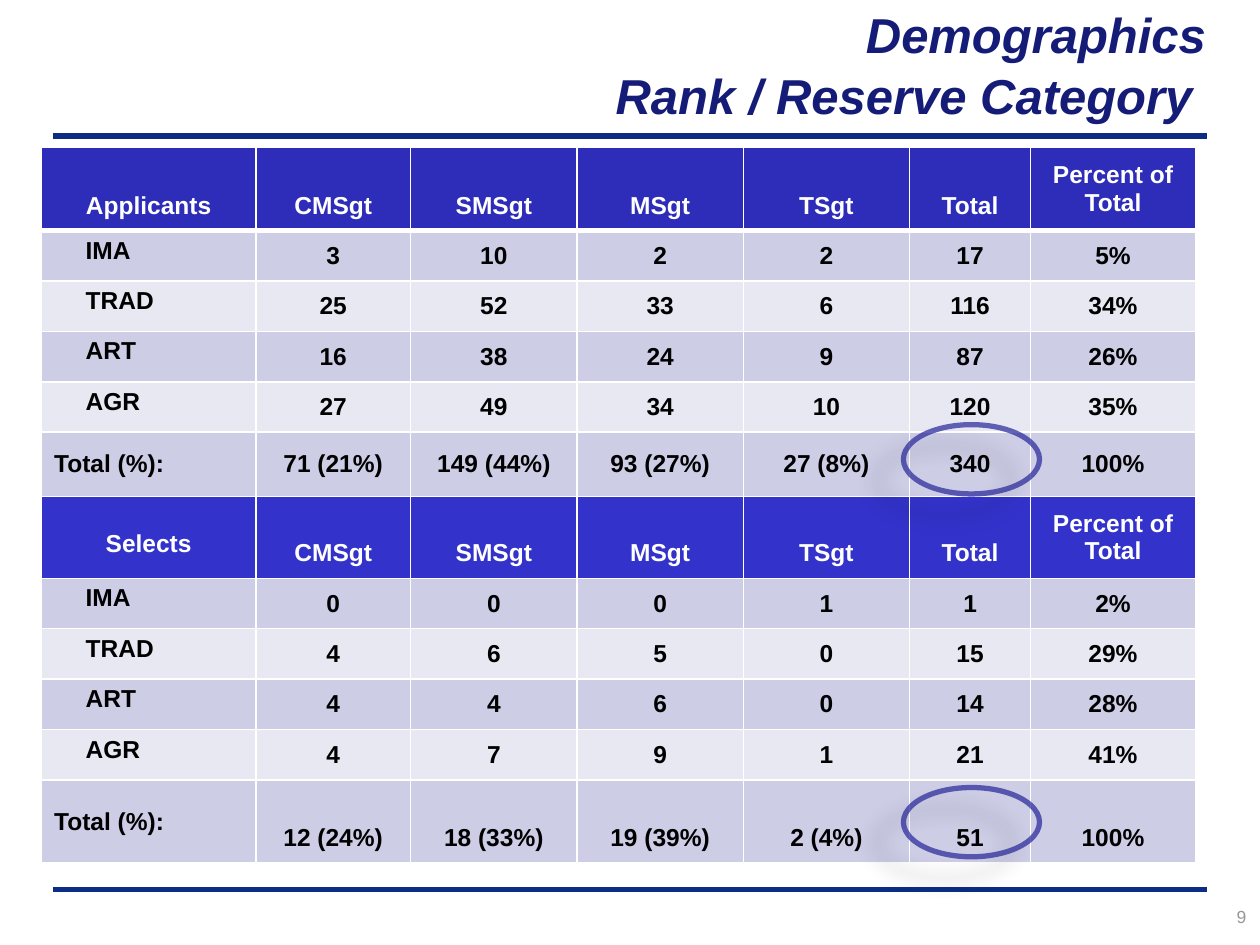
from lxml import etree
from pptx import Presentation
from pptx.dml.color import RGBColor
from pptx.enum.shapes import MSO_CONNECTOR as Connector, MSO_SHAPE as Shape
from pptx.enum.text import MSO_ANCHOR as Anchor, PP_ALIGN as Align
from pptx.oxml.ns import qn
from pptx.util import Inches, Pt

NAVY = RGBColor(0x15, 0x1C, 0x77)
RULE_BLUE = RGBColor(0x0C, 0x2D, 0x83)
APPLICANT_BLUE = RGBColor(0x2D, 0x2D, 0xB9)
SELECT_BLUE = RGBColor(0x33, 0x33, 0xCC)
DARK_BAND = RGBColor(0xCD, 0xCD, 0xE6)
LIGHT_BAND = RGBColor(0xE8, 0xE8, 0xF3)
RING_BLUE = RGBColor(0x26, 0x26, 0x99)
GRAY = RGBColor(0x96, 0x96, 0x96)
WHITE = RGBColor(0xFF, 0xFF, 0xFF)
BLACK = RGBColor(0, 0, 0)

RANKS = ["CMSgt", "SMSgt", "MSgt", "TSgt", "Total", "Percent of Total"]
ROWS = [
    ["Applicants", *RANKS],
    ["IMA", "3", "10", "2", "2", "17", "5%"],
    ["TRAD", "25", "52", "33", "6", "116", "34%"],
    ["ART", "16", "38", "24", "9", "87", "26%"],
    ["AGR", "27", "49", "34", "10", "120", "35%"],
    ["Total (%):", "71 (21%)", "149 (44%)", "93 (27%)", "27 (8%)", "340", "100%"],
    ["Selects", *RANKS],
    ["IMA", "0", "0", "0", "1", "1", "2%"],
    ["TRAD", "4", "6", "5", "0", "15", "29%"],
    ["ART", "4", "4", "6", "0", "14", "28%"],
    ["AGR", "4", "7", "9", "1", "21", "41%"],
    ["Total (%):", "12 (24%)", "18 (33%)", "19 (39%)", "2 (4%)", "51", "100%"],
]
COLUMN_WIDTHS = [1.7, 1.23, 1.32, 1.32, 1.32, 0.96, 1.31]
ROW_HEIGHTS = [0.66, 0.4, 0.4, 0.4, 0.4, 0.51, 0.65, 0.4, 0.4, 0.4, 0.4, 0.66]
SECTION_SIZE = 6
HEADER_FILLS = [APPLICANT_BLUE, SELECT_BLUE]


def write_text(frame, text, *, size=14, color=BLACK, bold=False, italic=False,
               align=Align.CENTER, indent=0, spacing=None):
    frame.word_wrap = True
    frame.text = text
    para = frame.paragraphs[0]
    para.alignment = align
    if indent:
        properties = para._p.get_or_add_pPr()
        properties.set("marL", "0")
        properties.set("indent", str(Inches(indent)))
    if spacing:
        para.line_spacing = spacing
    for span in para.runs:
        span.font.name = "Arial"
        span.font.size = Pt(size)
        span.font.bold = bold
        span.font.italic = italic
        span.font.color.rgb = color


def add_title(page):
    title = page.shapes.title
    title.left, title.top = Inches(1.67), Inches(0)
    title.width, title.height = Inches(8), Inches(1)
    write_text(title.text_frame, "Demographics\v Rank / Reserve Category ", size=28,
               color=NAVY, bold=True, italic=True, align=Align.RIGHT, spacing=1.05)
    title.text_frame.vertical_anchor = Anchor.MIDDLE


def add_rule(page, top):
    rule = page.shapes.add_connector(Connector.STRAIGHT, Inches(0.42), Inches(top),
                                     Inches(9.58), Inches(top))
    rule.line.color.rgb = RULE_BLUE
    rule.line.width = Pt(3)
    etree.SubElement(rule._element.spPr, qn("a:effectLst"))


def add_page_number(page):
    box = page.shapes.add_textbox(Inches(8.74), Inches(7.14), Inches(1.25), Inches(0.33))
    write_text(box.text_frame, "9", size=10, color=GRAY, align=Align.RIGHT)


def set_borders(cell, widths):
    properties = cell._tc.get_or_add_tcPr()
    for side, width in zip("LRTB", widths):
        border = etree.SubElement(properties, qn(f"a:ln{side}"), w=str(Pt(width)))
        fill = etree.SubElement(border, qn("a:solidFill"))
        etree.SubElement(fill, qn("a:srgbClr"), val=str(WHITE))


def format_cell(cell, text, row, column):
    section, line = divmod(row, SECTION_SIZE)
    header = line == 0
    total = line == SECTION_SIZE - 1
    label = column == 0 and not header
    last_row = row == len(ROWS) - 1

    top_width = 3 if row == 1 else 1
    bottom_width = 3 if row == 0 else 1
    set_borders(cell, [1, 1, top_width, bottom_width])
    cell.fill.solid()
    if header:
        cell.fill.fore_color.rgb = HEADER_FILLS[section]
    else:
        cell.fill.fore_color.rgb = DARK_BAND if line % 2 else LIGHT_BAND

    cell.margin_left = cell.margin_right = Inches(0.1)
    cell.margin_top = cell.margin_bottom = Inches(0.05)
    cell.vertical_anchor = Anchor.MIDDLE
    if text == "Selects":
        cell.margin_top = Inches(0.15)
    elif label and not total:
        cell.vertical_anchor = Anchor.TOP
    elif text != "Percent of Total" and (header or last_row and not label):
        cell.vertical_anchor = Anchor.BOTTOM
        cell.margin_bottom = Inches(0.09)
    write_text(cell.text_frame, text, bold=True, color=WHITE if header else BLACK,
               align=Align.LEFT if label else Align.CENTER,
               indent=0.25 if label and not total else 0)


def add_demographics_table(page):
    frame = page.shapes.add_table(len(ROWS), len(COLUMN_WIDTHS), Inches(0.33), Inches(1.17),
                                  Inches(sum(COLUMN_WIDTHS)), Inches(sum(ROW_HEIGHTS)))
    table = frame.table
    table.horz_banding = False
    for column, width in zip(table.columns, COLUMN_WIDTHS):
        column.width = Inches(width)
    for row, height in zip(table.rows, ROW_HEIGHTS):
        row.height = Inches(height)
    for row, texts in enumerate(ROWS):
        for column, text in enumerate(texts):
            format_cell(table.cell(row, column), text, row, column)


def add_ring(page, top):
    ring = page.shapes.add_shape(Shape.OVAL, Inches(7.17), Inches(top),
                                 Inches(1.08), Inches(0.55))
    ring.shadow.inherit = False
    ring.fill.background()
    ring.line.color.rgb = RING_BLUE
    ring.line.width = Pt(3)
    line_color = ring.line._ln.find(".//" + qn("a:srgbClr"))
    etree.SubElement(line_color, qn("a:alpha"), val="71000")
    effects = ring._element.spPr.find(qn("a:effectLst"))
    shadow = etree.SubElement(effects, qn("a:outerShdw"), blurRad=str(Pt(11.8)),
                              dist=str(Pt(19.7)), dir=str(141 * 60000),
                              algn="ctr", rotWithShape="0")
    shadow_color = etree.SubElement(shadow, qn("a:srgbClr"), val=str(BLACK))
    etree.SubElement(shadow_color, qn("a:alpha"), val="28000")


def main():
    deck = Presentation()
    deck.slide_width, deck.slide_height = Inches(10), Inches(7.5)
    page = deck.slides.add_slide(deck.slide_layouts[5])
    for top in (7.06, 1.08):
        add_rule(page, top)
    add_title(page)
    add_page_number(page)
    add_demographics_table(page)
    for top in (3.37, 6.25):
        add_ring(page, top)
    deck.save("out.pptx")


if __name__ == "__main__":
    main()
